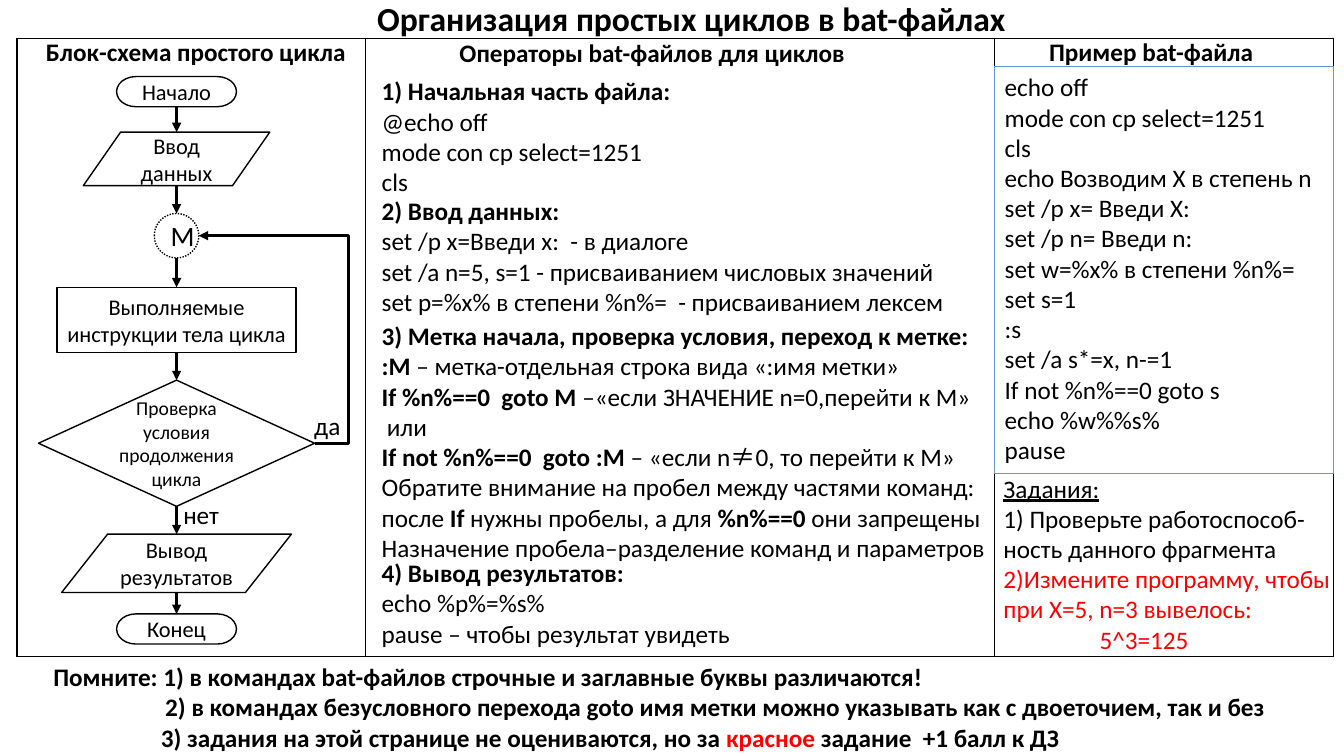
from dataclasses import dataclass
from lxml import etree
from pptx import Presentation
from pptx.dml.color import RGBColor
from pptx.enum.dml import MSO_LINE
from pptx.enum.shapes import MSO_CONNECTOR, MSO_SHAPE
from pptx.enum.text import MSO_ANCHOR, MSO_AUTO_SIZE, PP_ALIGN
from pptx.oxml.ns import qn
from pptx.util import Cm, Pt

LEFT, CENTER = PP_ALIGN.LEFT, PP_ALIGN.CENTER
TOP, MIDDLE = MSO_ANCHOR.TOP, MSO_ANCHOR.MIDDLE
NO_FIT = MSO_AUTO_SIZE.NONE
STRAIGHT, ELBOW = MSO_CONNECTOR.STRAIGHT, MSO_CONNECTOR.ELBOW
DOTS = MSO_LINE.ROUND_DOT
RECT = MSO_SHAPE.RECTANGLE
ENDS = MSO_SHAPE.FLOWCHART_TERMINATOR
DATA = MSO_SHAPE.FLOWCHART_DATA
MARK = MSO_SHAPE.FLOWCHART_CONNECTOR
WORK = MSO_SHAPE.FLOWCHART_PROCESS
TEST = MSO_SHAPE.FLOWCHART_DECISION
GLUED = (ENDS, WORK, TEST)


@dataclass(frozen=True)
class Theme:
    font: str = "Calibri"
    sign: str = "Noto Sans CJK JP"
    black: str = "000000"
    red: str = "FF0000"
    blue: str = "5B9BD5"
    title: int = 24
    mark: int = 20
    text: int = 18
    step: int = 16
    test: int = 14


THEME = Theme()


@dataclass(frozen=True)
class Span:
    text: str
    bold: bool | None = None
    color: str | None = None
    font: str | None = None


@dataclass(frozen=True)
class Para:
    spans: str | tuple[Span, ...]
    bold: bool = False
    color: str = THEME.black
    under: bool = False
    indent: float = 0


@dataclass(frozen=True)
class Box:
    at: tuple[float, float, float, float]
    paras: tuple[Para, ...]
    wrap: bool = False


@dataclass(frozen=True)
class Step:
    kind: int
    text: str
    top: float
    width: float
    height: float
    size: int = THEME.step


def plain(text: str) -> tuple[Para, ...]:
    return tuple(Para(line) for line in text.split("\n"))


def head(text: str) -> Para:
    return Para(text, bold=True)


TITLE = Box((9.25, -0.18, 16.71, 1.27), (head("Организация простых циклов в bat-файлах"),))
NOTES = Box((1.09, 16.54, 31.45, 2.57), (
    head("Помните: 1) в командах bat-файлов строчные и заглавные буквы различаются!"),
    Para("2) в командах безусловного перехода goto имя метки можно указывать "
         "как с двоеточием, так и без", bold=True, indent=2.82),
    Para((Span("3) задания на этой странице не оцениваются, но за "),
          Span("красное", color=THEME.red), Span(" задание  +1 балл к ДЗ")),
         bold=True, indent=2.71),
), wrap=True)
CODE = Box((25.07, 1.68, 8.53, 10.26), plain("""echo off
mode con cp select=1251
cls
echo Возводим X в степень n
set /p x= Введи X:
set /p n= Введи n:
set w=%x% в степени %n%=
set s=1
:s
set /a s*=x, n-=1
If not %n%==0 goto s
echo %w%%s%
pause"""), wrap=True)
BOXES = (
    Box((0.91, 0.79, 8.31, 1.03), (head("Блок-схема простого цикла"),)),
    Box((11.33, 0.81, 10.64, 1.03), (head("Операторы bat-файлов для циклов"),)),
    Box((26.19, 0.79, 5.89, 1.03), (head("Пример bat-файла"),)),
    Box((7.67, 10.21, 1.17, 1.03), plain("да")),
    Box((4.37, 12.47, 1.42, 1.03), plain("нет")),
    Box((9.37, 1.78, 7.87, 3.33), (
        head("1) Начальная часть файла:"),
        *plain("@echo off\nmode con cp select=1251\ncls"))),
    Box((9.37, 4.8, 14.86, 3.33), (
        head("2) Ввод данных:"),
        *plain("set /p x=Введи x:  - в диалоге\n"
               "set /a n=5, s=1 - присваиванием числовых значений\n"
               "set p=%x% в степени %n%=  - присваиванием лексем")), wrap=True),
    Box((9.37, 7.95, 15.9, 6.4), (
        head("3) Метка начала, проверка условия, переход к метке:"),
        Para((Span(":M", True), Span(" – метка-отдельная строка вида «:имя метки»"))),
        Para((Span("If %n%==0  goto M", True), Span(" –«если ЗНАЧЕНИЕ n=0,перейти к M»"))),
        Para("или", indent=0.13),
        Para((Span("If not %n%==0  goto :M", True), Span(" – «если n"),
              Span("≠", font=THEME.sign), Span("0, то перейти к M»"))),
        Para((Span("Обратите внимание на пробел между частями команд: после "),
              Span("If ", True), Span("нужны пробелы, а для "),
              Span("%n%==0", True), Span(" они запрещены"))),
        Para("Назначение пробела–разделение команд и параметров")), wrap=True),
    Box((9.37, 13.92, 14.58, 2.57), (
        head("4) Вывод результатов:"),
        *plain("echo %p%=%s%\npause – чтобы результат увидеть")), wrap=True),
    Box((25.04, 11.79, 8.84, 4.88), (
        Para("Задания:", under=True),
        *plain("1) Проверьте работоспособ-\nность данного фрагмента"),
        Para("2)Измените программу, чтобы", color=THEME.red),
        Para("при X=5, n=3 вывелось:", color=THEME.red),
        Para("5^3=125", color=THEME.red, indent=2.42))),
)
AXIS = 4.45
STEPS = (
    Step(ENDS, "Начало", 1.93, 3.02, 0.76),
    Step(DATA, "Ввод данных", 3.33, 4.7, 1.35),
    Step(MARK, "М", 5.38, 1.12, 1.12, THEME.mark),
    Step(WORK, "Выполняемые инструкции тела цикла", 7.24, 6.02, 1.65),
    Step(TEST, "Проверка условия продолжения цикла", 9.58, 6.96, 3.18, THEME.test),
    Step(DATA, "Вывод результатов", 13.46, 5.79, 1.47),
    Step(ENDS, "Конец", 15.47, 3.02, 0.76),
)
COLS = (8.79, 15.85, 8.53)


def rgb(color: str) -> RGBColor:
    return RGBColor.from_string(color)


def write(frame, paras, size=THEME.text, align=LEFT, anchor=TOP, wrap=True) -> None:
    frame.auto_size, frame.word_wrap, frame.vertical_anchor = NO_FIT, wrap, anchor
    for i, para in enumerate(paras):
        line = frame.add_paragraph() if i else frame.paragraphs[0]
        props = line._p.get_or_add_pPr()
        props.set("marL", str(Cm(para.indent)))
        props.set("indent", "0")
        etree.SubElement(props, qn("a:buNone"))
        line.alignment, line.space_before = align, Pt(0)
        font = line.font
        font.name, font.size, font.bold = THEME.font, Pt(size), para.bold
        font.underline, font.color.rgb = para.under, rgb(para.color)
        spans = (Span(para.spans),) if isinstance(para.spans, str) else para.spans
        for span in spans:
            run = line.add_run()
            run.text = span.text
            if span.bold is not None:
                run.font.bold = span.bold
            if span.color:
                run.font.color.rgb = rgb(span.color)
            if span.font:
                run.font.name = span.font


def place(holder, box: Box, size: int) -> None:
    holder.left, holder.top, holder.width, holder.height = map(Cm, box.at)
    write(holder.text_frame, box.paras, size, wrap=box.wrap)


def outline(shapes, kind: int, at, color: str, width: float):
    shape = shapes.add_shape(kind, *map(Cm, at))
    shape.shadow.inherit = False
    shape.fill.background()
    shape.line.color.rgb, shape.line.width = rgb(color), Pt(width)
    return shape


def arrow(shapes, kind: int, *ends: float):
    link = shapes.add_connector(kind, *map(Cm, ends))
    link.line.color.rgb, link.line.width = rgb(THEME.black), Pt(2.25)
    etree.SubElement(link.line._get_or_add_ln(), qn("a:tailEnd"), type="triangle")
    etree.SubElement(link._element.spPr, qn("a:effectLst"))
    return link


def grid(shapes) -> None:
    """Draw the empty three-column frame of the slide."""
    table = shapes.add_table(1, len(COLS), Cm(0.43), Cm(0.97), Cm(sum(COLS)), Cm(15.57)).table
    table.first_row = table.horz_banding = False
    for i, width in enumerate(COLS):
        table.columns[i].width = Cm(width)
        cell = table.cell(0, i)
        cell.fill.background()
        props = cell._tc.get_or_add_tcPr()
        for k, side in enumerate(("lnL", "lnR", "lnT", "lnB")):
            edge = etree.Element(qn(f"a:{side}"), w=str(Pt(1)))
            fill = etree.SubElement(edge, qn("a:solidFill"))
            etree.SubElement(fill, qn("a:srgbClr"), val=THEME.black)
            props.insert(k, edge)


def flow(shapes) -> None:
    """Draw the steps, the arrows between them and the loop back."""
    drawn = []
    for step in STEPS:
        at = (AXIS - step.width / 2, step.top, step.width, step.height)
        shape = outline(shapes, step.kind, at, THEME.black, 1)
        if step.kind == MARK:
            shape.line.dash_style = DOTS
        write(shape.text_frame, plain(step.text), step.size, CENTER, MIDDLE)
        drawn.append(shape)
    for i, (step, after) in enumerate(zip(STEPS, STEPS[1:])):
        link = arrow(shapes, STRAIGHT, AXIS, step.top + step.height, AXIS, after.top)
        if step.kind in GLUED:
            link.begin_connect(drawn[i], 2)
        if after.kind in GLUED:
            link.end_connect(drawn[i + 1], 0)
    mark, test = STEPS[2], STEPS[4]
    loop = arrow(shapes, ELBOW, AXIS + test.width / 2, test.top + test.height / 2,
                 AXIS + mark.width / 2, mark.top + mark.height / 2)
    bend = loop._element.spPr.find(qn("a:prstGeom")).get_or_add_avLst()
    etree.SubElement(bend, qn("a:gd"), name="adj1", fmla="val -29400")


def main() -> None:
    deck = Presentation()
    deck.slide_width, deck.slide_height = Cm(33.87), Cm(19.05)
    slide = deck.slides.add_slide(deck.slide_layouts[1])
    shapes = slide.shapes
    place(shapes.title, TITLE, THEME.title)
    place(slide.placeholders[1], NOTES, THEME.text)
    grid(shapes)
    flow(shapes)
    code = outline(shapes, RECT, CODE.at, THEME.blue, 0.75)
    write(code.text_frame, CODE.paras)
    for box in BOXES:
        frame = shapes.add_textbox(*map(Cm, box.at)).text_frame
        write(frame, box.paras, wrap=box.wrap)
    deck.save("out.pptx")


if __name__ == "__main__":
    main()
